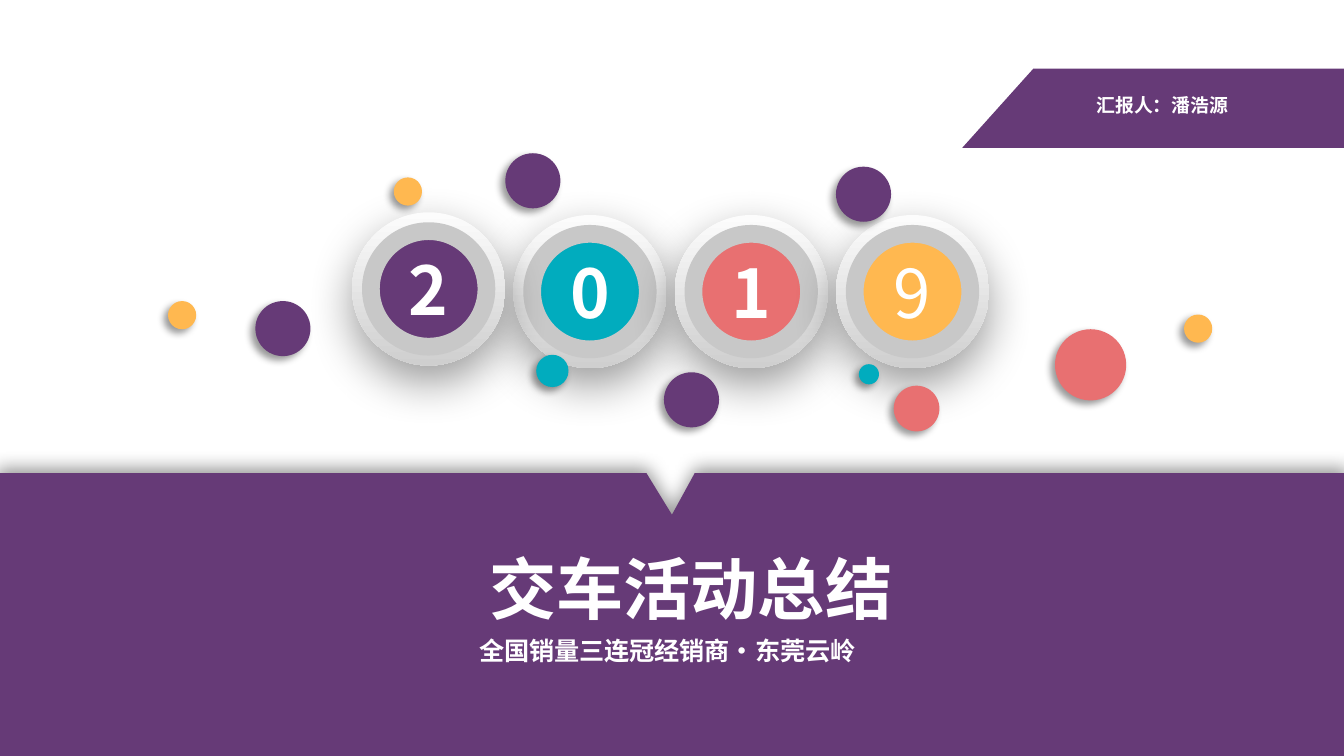
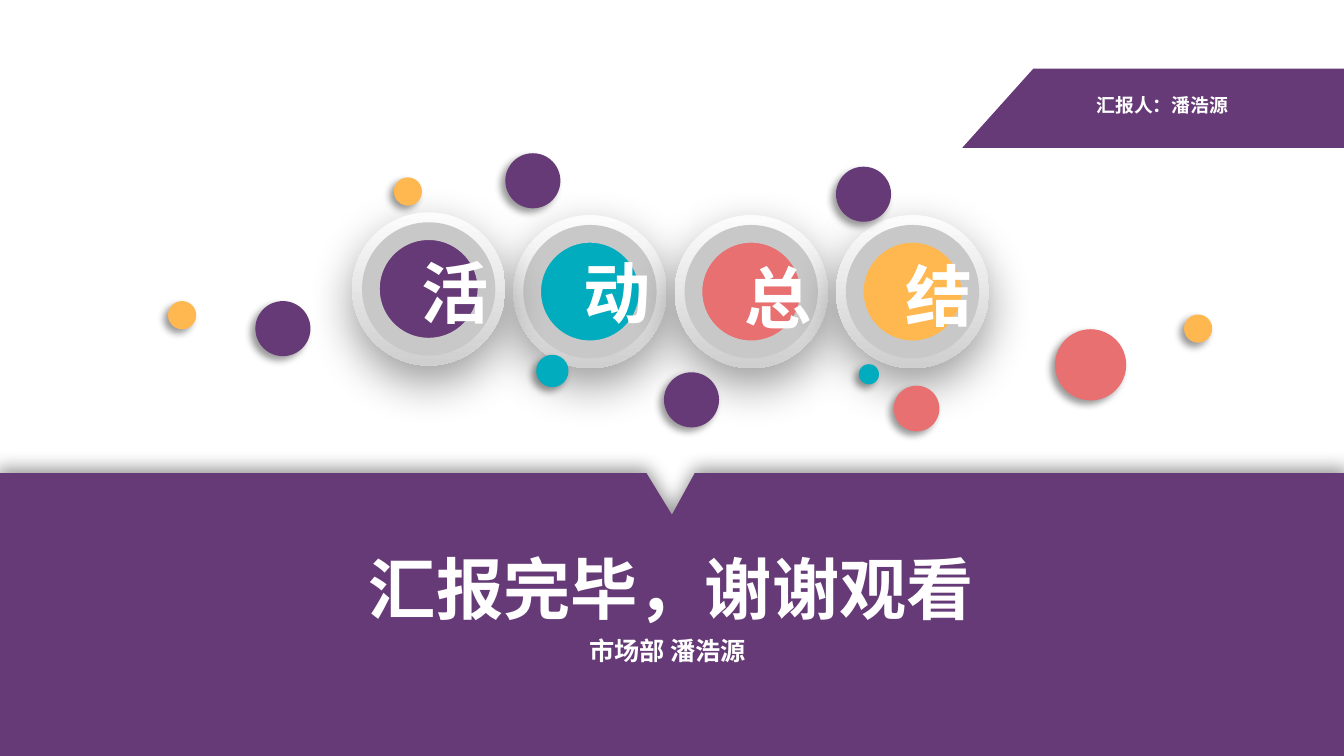
from dataclasses import dataclass

from lxml import etree
from pptx import Presentation
from pptx.dml.color import RGBColor
from pptx.enum.shapes import MSO_SHAPE
from pptx.enum.text import MSO_ANCHOR, MSO_AUTO_SIZE, PP_ALIGN
from pptx.oxml.ns import qn
from pptx.util import Inches, Pt

OVAL = MSO_SHAPE.OVAL
MIDDLE, TOP = MSO_ANCHOR.MIDDLE, MSO_ANCHOR.TOP
CENTER, LEFT = PP_ALIGN.CENTER, PP_ALIGN.LEFT
GROW = MSO_AUTO_SIZE.SHAPE_TO_FIT_TEXT


@dataclass(frozen=True)
class Theme:
    purple: str = "663A77"
    teal: str = "01ACBE"
    coral: str = "E87071"
    amber: str = "FFB850"
    white: str = "FFFFFF"
    dial: tuple = ("FCFCFC", "CFCFCF")
    rim: tuple = ("FAFAFA", "C8C8C8", "969696")
    rim_width: float = 9.5
    font: str = "Noto Sans CJK SC"
    letter_font: str = "Roboto Condensed"
    display: float = 36
    subtitle: float = 13.5
    label: float = 10.1
    # Shadows: blur and distance in points, direction in degrees
    dial_shadow: tuple = (25, 9, 90)
    dot_shadow: tuple = (4, 3, 135)
    band_shadow: tuple = (9, 3, 270)


THEME = Theme()
WIDTH = 10
HEIGHT = WIDTH * 9 / 16

PRESENTER = "汇报人：潘浩源"
SLIDES = [
    {"digits": "2019", "title": "交车活动总结", "title_width": 5.24,
     "subtitle": "全国销量三连冠经销商·东莞云岭"},
    {"letters": "活动总结", "title": "汇报完毕，谢谢观看", "title_width": 4.95,
     "subtitle": "市场部 潘浩源"},
]

DIAL_COLORS = [THEME.purple, THEME.teal, THEME.coral, THEME.amber]
DIAL_ORDER = [1, 2, 3, 0]
DIAL_LEFT, DIAL_STEP, DIAL_SIZE, RIM_INSET = 2.62, 1.2, 1.14, 0.14
DIAL_TOPS = [1.58, 1.6, 1.6, 1.6]
LETTER_OFFSET, LETTER_TOPS = 0.42, [1.82, 1.82, 1.86, 1.84]

# Colour, diameter, then the left and top of each dot
DOTS = [
    (THEME.purple, 0.41, [(3.76, 1.14), (1.9, 2.24), (4.94, 2.77), (6.22, 1.24)]),
    (THEME.coral, 0.53, [(7.85, 2.45)]),
    (THEME.coral, 0.34, [(6.65, 2.87)]),
    (THEME.teal, 0.24, [(3.99, 2.64)]),
    (THEME.amber, 0.21, [(1.25, 2.24), (2.93, 1.32), (8.81, 2.34)]),
    (THEME.teal, 0.15, [(6.39, 2.71)]),
]

BLEED = 0.02
BAND_TOP, NOTCH_TIP = 3.52, 3.83
BAND = [(-BLEED, BAND_TOP), (4.81, BAND_TOP), (5, NOTCH_TIP), (5.17, BAND_TOP),
        (WIDTH + BLEED, BAND_TOP), (WIDTH + BLEED, HEIGHT + BLEED),
        (-BLEED, HEIGHT + BLEED)]
RIBBON = [(7.69, 0.51), (WIDTH + BLEED, 0.51), (WIDTH + BLEED, 1.1), (7.16, 1.1)]


def add_child(parent, tag, **attributes):
    values = {name: str(value) for name, value in attributes.items()}
    return etree.SubElement(parent, qn(tag), values)


def gradient(colors):
    """Return a top-to-bottom gradient fill with evenly spaced stops."""
    fill = etree.Element(qn("a:gradFill"), rotWithShape="1")
    stops = add_child(fill, "a:gsLst")
    for index, color in enumerate(colors):
        stop = add_child(stops, "a:gs", pos=100000 * index // (len(colors) - 1))
        add_child(stop, "a:srgbClr", val=color)
    add_child(fill, "a:lin", ang=90 * 60000, scaled=0)
    return fill


def set_shadow(shape, shadow):
    shape.shadow.inherit = False
    if shadow is None:
        return
    blur, distance, direction = shadow
    effects = shape._element.spPr.find(qn("a:effectLst"))
    outer = add_child(effects, "a:outerShdw", blurRad=Pt(blur), dist=Pt(distance),
                      dir=direction * 60000, algn="ctr", rotWithShape=0)
    color = add_child(outer, "a:srgbClr", val="000000")
    add_child(color, "a:alpha", val=40000)


def paint(shape, color, shadow=None):
    shape.fill.solid()
    shape.fill.fore_color.rgb = RGBColor.from_string(color)
    shape.line.fill.background()
    set_shadow(shape, shadow)


def add_circle(shapes, left, top, size):
    return shapes.add_shape(OVAL, Inches(left), Inches(top), Inches(size), Inches(size))


def add_outline(shapes, points, shadow=None):
    corners = [(Inches(x), Inches(y)) for x, y in points]
    builder = shapes.build_freeform(*corners[0])
    builder.add_line_segments(corners[1:], close=True)
    paint(builder.convert_to_shape(), THEME.purple, shadow)


def write(shape, text, size, face=THEME.font, bold=True, align=CENTER, anchor=MIDDLE):
    frame = shape.text_frame
    frame.text = text
    frame.vertical_anchor = anchor
    paragraph = frame.paragraphs[0]
    paragraph.alignment = align
    for run in paragraph.runs:
        run.font.size = Pt(size)
        run.font.bold = bold
        run.font.name = face
        run.font.color.rgb = RGBColor.from_string(THEME.white)
        add_child(run.font._element, "a:ea", typeface=face)


def add_text(shapes, box, text, size, wrap=True, grow=True, **style):
    shape = shapes.add_textbox(*(Inches(length) for length in box))
    write(shape, text, size, **style)
    shape.text_frame.word_wrap = wrap
    if grow:
        shape.text_frame.auto_size = GROW
    return shape


def add_dial(slide, index, digit):
    shapes = slide.shapes.add_group_shape().shapes
    left, top = DIAL_LEFT + index * DIAL_STEP, DIAL_TOPS[index]
    dial = add_circle(shapes, left, top, DIAL_SIZE)
    dial.line.fill.background()
    set_shadow(dial, THEME.dial_shadow)
    dial._element.spPr.find(qn("a:prstGeom")).addnext(gradient(THEME.dial))

    face = add_circle(shapes, left + RIM_INSET, top + RIM_INSET,
                      DIAL_SIZE - 2 * RIM_INSET)
    paint(face, DIAL_COLORS[index])
    face.line.width = Pt(THEME.rim_width)
    outline = face._element.spPr.find(qn("a:ln"))
    outline.remove(outline.find(qn("a:noFill")))
    outline.insert(0, gradient(THEME.rim))
    if digit:
        write(face, digit, THEME.display, bold=digit != "9")


def add_letters(slide, letters):
    for index, letter in enumerate(letters):
        left = DIAL_LEFT + index * DIAL_STEP + LETTER_OFFSET
        add_text(slide.shapes, (left, LETTER_TOPS[index], 0.3, 0.71), letter,
                 THEME.display, face=THEME.letter_font, anchor=TOP)


def add_ribbon(slide):
    shapes = slide.shapes.add_group_shape().shapes
    add_outline(shapes, RIBBON)
    add_text(shapes, (8.06, 0.65, 1.18, 0.27), PRESENTER, THEME.label,
             wrap=False, align=LEFT, anchor=TOP)


def add_headline(slide, content):
    add_text(slide.shapes, (2.52, 4.02, content["title_width"], 0.71),
             content["title"], THEME.display, anchor=TOP)
    subtitle = add_text(slide.shapes, (3.23, 4.69, 3.47, 0.3), content["subtitle"],
                        THEME.subtitle, grow=False)
    frame = subtitle.text_frame
    frame.margin_left = frame.margin_right = Inches(0.07)
    frame.margin_top = frame.margin_bottom = Inches(0.04)


def add_dots(slide):
    for color, size, places in DOTS:
        for left, top in places:
            paint(add_circle(slide.shapes, left, top, size), color, THEME.dot_shadow)


def build_slide(presentation, content):
    slide = presentation.slides.add_slide(presentation.slide_layouts[6])
    slide.background.fill.solid()
    slide.background.fill.fore_color.rgb = RGBColor.from_string(THEME.white)
    digits = content.get("digits")
    for index in DIAL_ORDER:
        add_dial(slide, index, digits[index] if digits else None)
    add_letters(slide, content.get("letters", ""))
    add_outline(slide.shapes, BAND, THEME.band_shadow)
    add_ribbon(slide)
    add_headline(slide, content)
    add_dots(slide)


def main():
    presentation = Presentation()
    presentation.slide_width = Inches(WIDTH)
    presentation.slide_height = Inches(HEIGHT)
    for content in SLIDES:
        build_slide(presentation, content)
    presentation.save("out.pptx")


if __name__ == "__main__":
    main()
